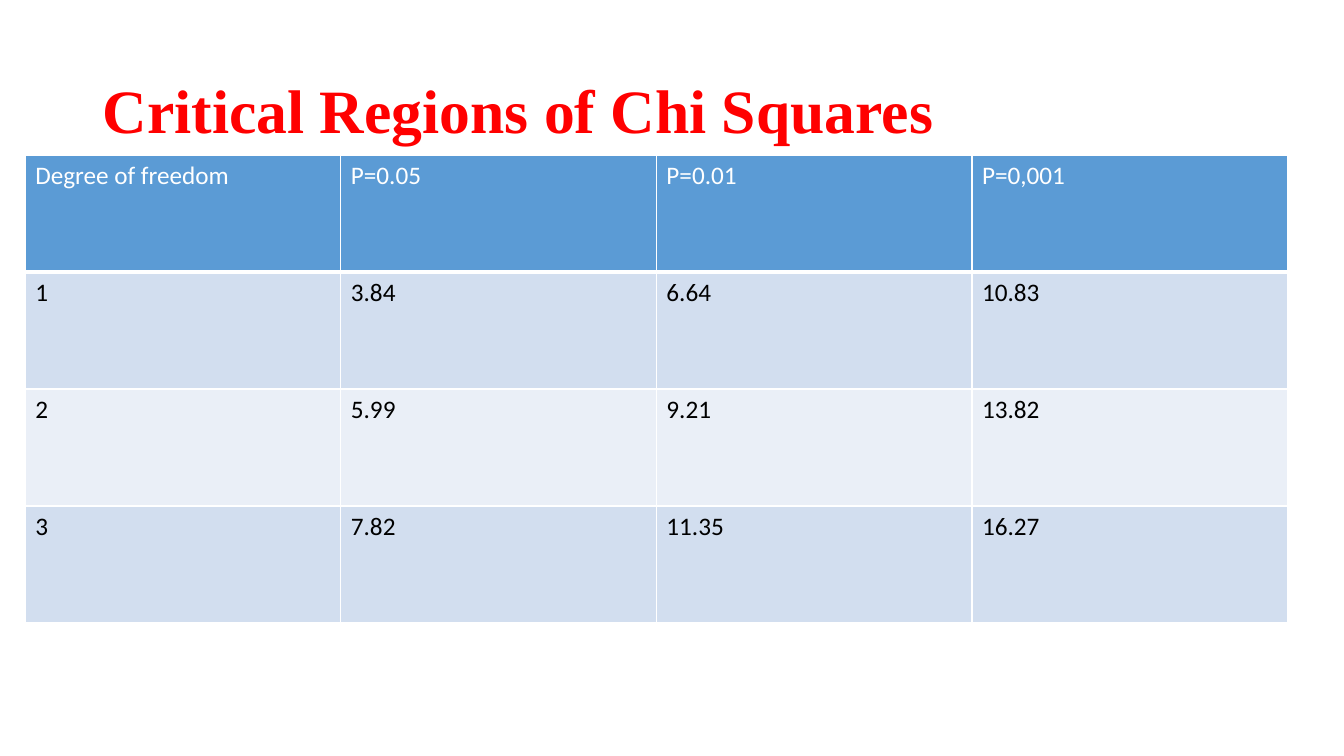
from dataclasses import dataclass

from lxml.etree import SubElement
from pptx import Presentation
from pptx.dml.color import RGBColor
from pptx.enum.text import MSO_ANCHOR, MSO_AUTO_SIZE, PP_ALIGN
from pptx.oxml.ns import qn
from pptx.slide import Slide
from pptx.table import _Cell
from pptx.text.text import TextFrame
from pptx.util import Pt

EMU_PER_PX = 9144  # 100 px to the inch

WHITE = RGBColor(0xFF, 0xFF, 0xFF)
BLACK = RGBColor(0x00, 0x00, 0x00)
RED = RGBColor(0xFF, 0x00, 0x00)
HEADER_BLUE = RGBColor(0x5B, 0x9B, 0xD5)
BAND_DARK = RGBColor(0xD2, 0xDE, 0xEF)
BAND_LIGHT = RGBColor(0xEA, 0xEF, 0xF7)


@dataclass(frozen=True)
class TableRow:
    values: tuple[str, ...]
    fill: RGBColor
    color: RGBColor = BLACK
    bottom_border: int = 1


ROWS = (
    TableRow(("Degree of freedom", "P=0.05", "P=0.01", "P=0,001"), HEADER_BLUE, WHITE, 3),
    TableRow(("1", "3.84", "6.64", "10.83"), BAND_DARK),
    TableRow(("2", "5.99", "9.21", "13.82"), BAND_LIGHT),
    TableRow(("3", "7.82", "11.35", "16.27"), BAND_DARK),
)
COLUMN_WIDTH = 313
ROW_HEIGHT = 116


def px(length: int) -> int:
    return length * EMU_PER_PX


def write_text(frame: TextFrame, text: str, *, size: int, font: str, color: RGBColor,
               bold: bool = False, line_spacing: float = 1.0) -> None:
    paragraph = frame.paragraphs[0]
    paragraph.alignment = PP_ALIGN.LEFT
    paragraph.line_spacing = line_spacing
    run = paragraph.add_run()
    run.text = text
    run.font.size = Pt(size)
    run.font.name = font
    run.font.bold = bold
    run.font.color.rgb = color


def set_borders(cell: _Cell, bottom: int) -> None:
    """Draw white borders, 1 pt wide except for the bottom one."""
    properties = cell._tc.get_or_add_tcPr()
    widths = {"a:lnL": 1, "a:lnR": 1, "a:lnT": 1, "a:lnB": bottom}
    for position, (tag, width) in enumerate(widths.items()):
        line = SubElement(properties, qn(tag), w=str(Pt(width)))
        fill = SubElement(line, qn("a:solidFill"))
        SubElement(fill, qn("a:srgbClr"), val=str(WHITE))
        properties.insert(position, line)


def add_title(slide: Slide) -> None:
    title = slide.shapes.title
    title.left, title.top, title.width, title.height = map(px, (92, 40, 1150, 145))
    frame = title.text_frame
    frame.auto_size = MSO_AUTO_SIZE.NONE
    frame.vertical_anchor = MSO_ANCHOR.MIDDLE
    write_text(frame, "Critical Regions of Chi Squares", size=44, font="Times New Roman",
               color=RED, bold=True, line_spacing=0.9)


def add_critical_values(slide: Slide) -> None:
    column_count = len(ROWS[0].values)
    table = slide.shapes.add_table(
        len(ROWS), column_count, px(25), px(154),
        px(COLUMN_WIDTH * column_count), px(ROW_HEIGHT * len(ROWS))).table
    for row_index, row in enumerate(ROWS):
        for column_index, value in enumerate(row.values):
            cell = table.cell(row_index, column_index)
            cell.fill.solid()
            cell.fill.fore_color.rgb = row.fill
            set_borders(cell, row.bottom_border)
            write_text(cell.text_frame, value, size=18, font="Calibri", color=row.color)


def main() -> None:
    presentation = Presentation()
    presentation.slide_width = px(1333)
    presentation.slide_height = px(750)
    slide = presentation.slides.add_slide(presentation.slide_layouts.get_by_name("Title Only"))
    add_title(slide)
    add_critical_values(slide)
    presentation.save("out.pptx")


if __name__ == "__main__":
    main()
